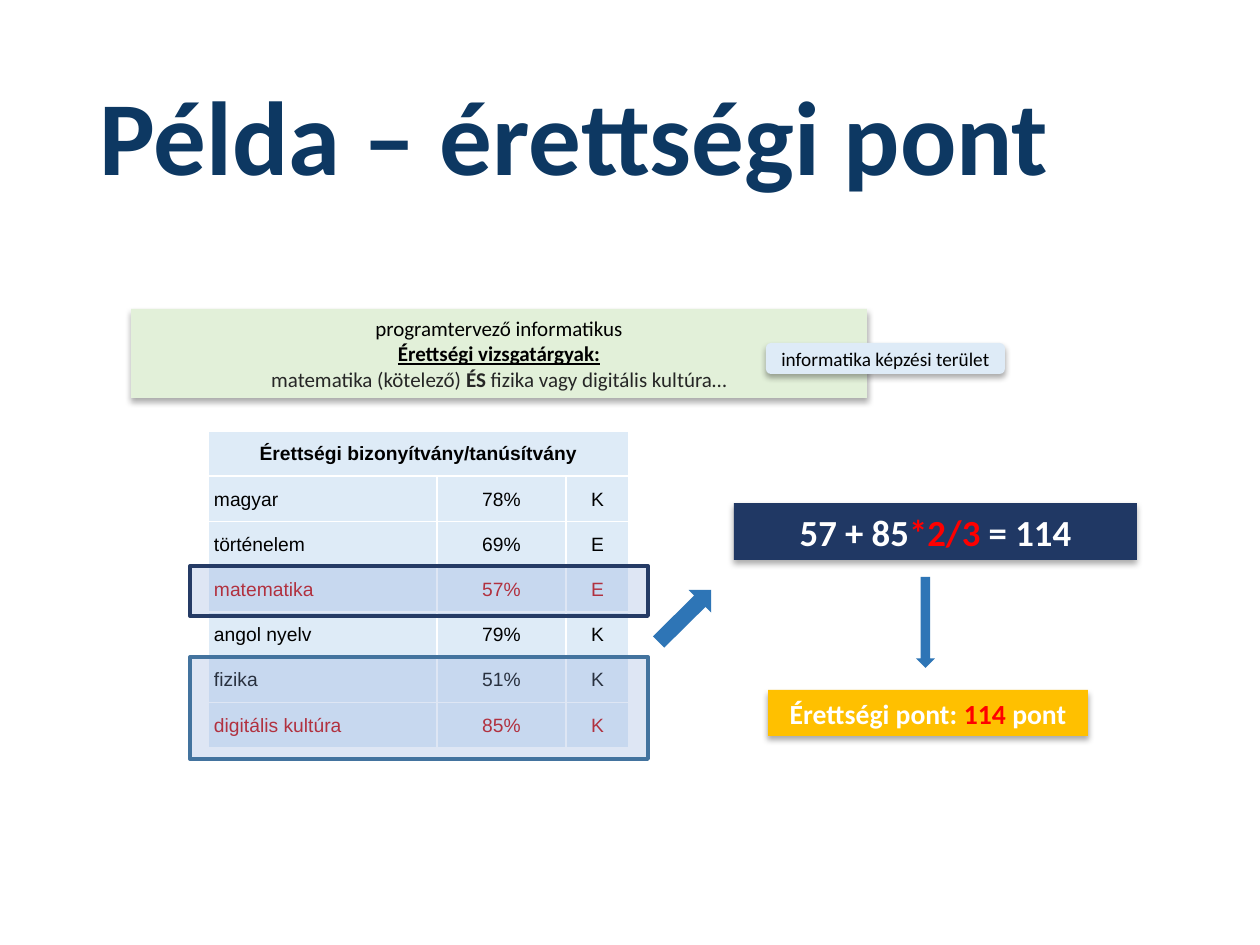
from lxml.etree import SubElement
from pptx import Presentation
from pptx.dml.color import RGBColor
from pptx.enum.shapes import MSO_SHAPE
from pptx.enum.text import MSO_ANCHOR, PP_ALIGN
from pptx.oxml import parse_xml
from pptx.oxml.ns import nsdecls, qn
from pptx.util import Pt

PX = 7257  # EMU in one px, at 126 px to the inch
NAVY, RED, BLACK, WHITE = "203864", "FF0000", "000000", "FFFFFF"
PALE_BLUE, ARROW_BLUE = "DEEBF7", "2E75B6"


def write(paragraph, text, size=12, color=BLACK, font="Calibri", bold=False,
          underline=False, align=PP_ALIGN.CENTER):
    paragraph.alignment = align
    run = paragraph.add_run()
    run.text = text
    run.font.name = font
    run.font.size = Pt(size)
    run.font.bold = bold
    run.font.underline = underline
    run.font.color.rgb = RGBColor.from_string(color)


def add_block(geometry, box, fill, paragraphs=(), size=12, shadow=False):
    shape = slide.shapes.add_shape(geometry, *[PX * value for value in box])
    shape.shadow.inherit = False
    shape.fill.solid()
    shape.fill.fore_color.rgb = RGBColor.from_string(fill)
    shape.line.fill.background()
    if shadow:
        effects = shape._element.spPr.find(qn("a:effectLst"))
        effects.append(parse_xml(
            f'<a:outerShdw {nsdecls("a")} blurRad="{Pt(3.5)}" dist="{Pt(2.2)}" '
            'dir="5400000" algn="t" rotWithShape="0"><a:srgbClr val="000000">'
            '<a:alpha val="32000"/></a:srgbClr></a:outerShdw>'))
    frame = shape.text_frame
    frame.word_wrap = True
    frame.vertical_anchor = MSO_ANCHOR.MIDDLE
    frame.margin_left = frame.margin_right = 0
    frame.margin_top = frame.margin_bottom = 0
    for index, runs in enumerate(paragraphs):
        paragraph = frame.add_paragraph() if index else frame.paragraphs[0]
        for text, style in runs:
            write(paragraph, text, size=size, **style)
    return shape


presentation = Presentation()
presentation.slide_width = PX * 1260
presentation.slide_height = PX * 945
slide = presentation.slides.add_slide(presentation.slide_layouts[6])

# Title
title = slide.shapes.add_textbox(PX * 87, PX * 50, PX * 1086, PX * 183)
title.text_frame.word_wrap = True
title.text_frame.vertical_anchor = MSO_ANCHOR.MIDDLE
title_paragraph = title.text_frame.paragraphs[0]
title_paragraph.line_spacing = 0.9
write(title_paragraph, "Példa – érettségi pont", size=60, color="0D3862",
      bold=True, align=PP_ALIGN.LEFT)

# Result
white_bold = {"color": WHITE, "bold": True}
red_bold = {"color": RED, "bold": True}
add_block(MSO_SHAPE.RECTANGLE, (768, 690, 320, 46), "FFC000",
          [[("Érettségi pont: ", white_bold), ("114", red_bold), (" pont", white_bold)]],
          size=15.8, shadow=True)

# Certificate table
subjects = [
    ("magyar", "78%", "K", BLACK),
    ("történelem", "69%", "E", BLACK),
    ("matematika", "57%", "E", "C00000"),
    ("angol nyelv", "79%", "K", BLACK),
    ("fizika", "51%", "K", BLACK),
    ("digitális kultúra", "85%", "K", "C00000"),
]
table = slide.shapes.add_table(len(subjects) + 1, 3, PX * 208, PX * 431,
                               PX * 421, PX * 317).table
for column, width in zip(table.columns, (229, 129, 63)):
    column.width = PX * width
for cell in table.iter_cells():
    cell.fill.solid()
    cell.fill.fore_color.rgb = RGBColor.from_string(PALE_BLUE)
    cell.vertical_anchor = MSO_ANCHOR.MIDDLE
    cell.margin_left = cell.margin_right = cell.margin_top = PX
    cell.margin_bottom = 0
    properties = cell._tc.get_or_add_tcPr()
    for position, side in enumerate(("a:lnL", "a:lnR", "a:lnT", "a:lnB")):
        border = SubElement(properties, qn(side), w=str(Pt(1)))
        SubElement(SubElement(border, qn("a:solidFill")), qn("a:srgbClr"), val=WHITE)
        properties.insert(position, border)

table.cell(0, 0).merge(table.cell(0, 2))
write(table.cell(0, 0).text_frame.paragraphs[0], "Érettségi bizonyítvány/tanúsítvány",
      size=11, font="Arial", bold=True)
for row, (*values, color) in enumerate(subjects, start=1):
    table.cell(row, 0).margin_left = PX * 6
    for column, value in enumerate(values):
        write(table.cell(row, column).text_frame.paragraphs[0], value, size=11,
              color=color, font="Arial",
              align=PP_ALIGN.CENTER if column else PP_ALIGN.LEFT)

# Programme and its exam subjects
gray = {"color": "262626"}
add_block(MSO_SHAPE.RECTANGLE, (131, 309, 736, 89), "E2F0D9", [
    [("programtervező informatikus", {})],
    [("Érettségi vizsgatárgyak:", {"bold": True, "underline": True})],
    [("matematika (kötelező) ", gray), ("ÉS ", {"color": "262626", "bold": True}),
     ("fizika vagy digitális kultúra…", gray)],
], shadow=True)

# Calculation
add_block(MSO_SHAPE.RECTANGLE, (734, 503, 403, 57), NAVY,
          [[("57 + 85", white_bold), ("*2/3", red_bold), (" = 114", white_bold)]],
          size=21, shadow=True)

# Arrows
table_arrow = add_block(MSO_SHAPE.RIGHT_ARROW, (648, 600, 74, 32), ARROW_BLUE)
table_arrow.rotation = 315.3
add_block(MSO_SHAPE.DOWN_ARROW, (916, 577, 19, 91), ARROW_BLUE)

# Field of study
add_block(MSO_SHAPE.ROUNDED_RECTANGLE, (766, 343, 239, 31), PALE_BLUE,
          [[("informatika képzési terület", {})]], size=11, shadow=True)

# Frames over the counted subjects
for top, height, line_color in ((657, 102, "43739E"), (566, 50, "253B65")):
    frame_shape = add_block(MSO_SHAPE.RECTANGLE, (190, top, 458, height), "8FAADC")
    fill_color = frame_shape._element.spPr.find(qn("a:solidFill"))[0]
    SubElement(fill_color, qn("a:alpha"), val="29000")
    frame_shape.line.color.rgb = RGBColor.from_string(line_color)
    frame_shape.line.width = Pt(2.25)

presentation.save("out.pptx")
